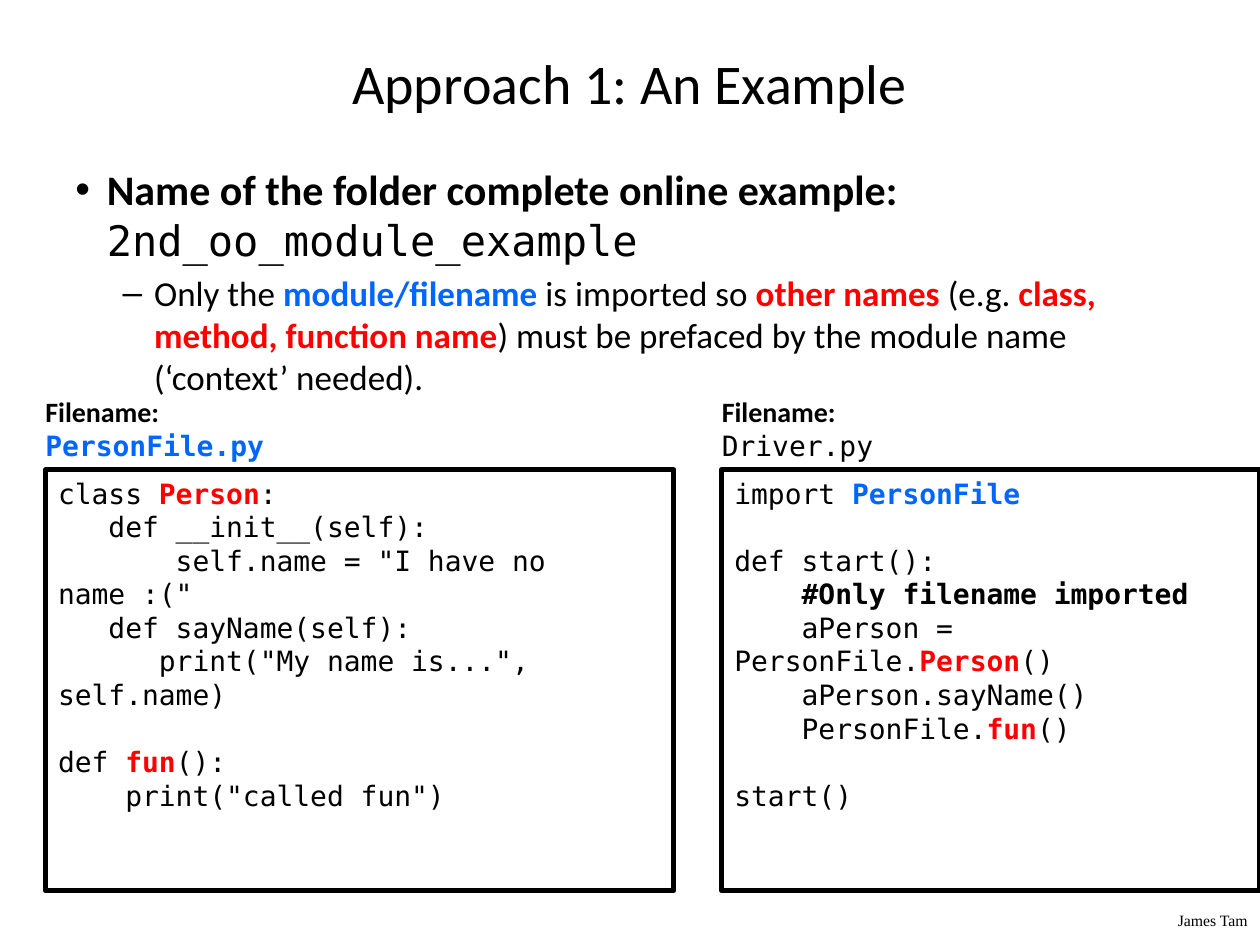
from dataclasses import dataclass

from lxml.etree import SubElement
from pptx import Presentation
from pptx.dml.color import RGBColor as RGB
from pptx.enum.shapes import MSO_SHAPE as SHAPE
from pptx.enum.text import MSO_ANCHOR as ANCHOR, PP_ALIGN as ALIGN
from pptx.oxml.ns import qn
from pptx.util import Pt


@dataclass(frozen=True)
class Theme:
    black: RGB = RGB(0, 0, 0)
    white: RGB = RGB(255, 255, 255)
    blue: RGB = RGB(0x00, 0x66, 0xFF)
    red: RGB = RGB(255, 0, 0)
    sans: str = "Calibri"
    mono: str = "DejaVu Sans Mono"
    serif: str = "Times New Roman"
    title: float = 32
    point: float = 24
    detail: float = 20
    code: float = 16
    footer: float = 9


T = Theme()
BOLD = {"bold": True}
BLUE = {"color": T.blue, "bold": True}
RED = {"color": T.red, "bold": True}
MONO = {"font": T.mono}

# A line is a list of runs; a run is plain text or (text, format).
TITLE = "Approach 1: An Example"
FOOTER = "James Tam"
POINT = [("Name of the folder complete online example: ", BOLD), ("2nd_oo_module_example", MONO)]
DETAIL = [
    "Only the ", ("module/filename ", BLUE), "is imported so ", ("other names ", RED),
    "(e.g. ", ("class, method, function name", RED),
    ") must be prefaced by the module name (‘context’ needed).",
]
# Each file: left, width, name run, then blocks of code lines set apart by a gap
FILES = [
    (26, 359, ("PersonFile.py", MONO | BLUE), [
        [
            ["class ", ("Person", RED), ":"],
            ["   def __init__(self):"],
            ['       self.name = "I have no name :("'],
            ["   def sayName(self):"],
            ['      print("My name is...", self.name)'],
        ],
        [
            ["def ", ("fun", RED), "():"],
            ['    print("called fun")'],
        ],
    ]),
    (412.5, 307.5, ("Driver.py", MONO), [
        [["import ", ("PersonFile", BLUE)]],
        [
            ["def start():"],
            [("    #Only filename imported", BOLD)],
            ["    aPerson = PersonFile.", ("Person", RED), "()"],
            ["    aPerson.sayName()"],
            ["    PersonFile.", ("fun", RED), "()"],
        ],
        [["start()"]],
    ]),
]
CODE_TOP, CODE_HEIGHT = 268.5, 240.5
LABEL_WIDTH, LABEL_HEIGHT = 152, 46.5
CODE_GAP = 1.2 * T.code
SIDE_INSET = 7.2


def add_line(tf, runs, size, font=T.sans, align=ALIGN.LEFT, before=0, indent=0, bullet=None, hang=18):
    """Add one paragraph of runs, using the empty first paragraph if there is one."""
    p = tf.paragraphs[0] if not tf.paragraphs[0].runs else tf.add_paragraph()
    p.alignment, p.space_before = align, Pt(before)
    pPr = p._p.get_or_add_pPr()
    pPr.set("marL", str(Pt(indent)))
    pPr.set("indent", str(Pt(-hang if bullet else 0)))
    if bullet:
        SubElement(pPr, qn("a:buFont")).set("typeface", "Arial")
        SubElement(pPr, qn("a:buChar")).set("char", bullet)
    for run in runs:
        text, style = (run, {}) if isinstance(run, str) else run
        r = p.add_run()
        r.text = text
        r.font.size = Pt(size)
        r.font.name = style.get("font", font)
        r.font.bold = style.get("bold", False)
        r.font.color.rgb = style.get("color", T.black)


def set_frame(sp, left_inset=SIDE_INSET, anchor=ANCHOR.TOP):
    tf = sp.text_frame
    tf.word_wrap = True
    tf.vertical_anchor = anchor
    tf.margin_left, tf.margin_right = Pt(left_inset), Pt(SIDE_INSET)
    tf.margin_top = tf.margin_bottom = Pt(3.6)
    return tf


def add_text(slide, box, **frame):
    return set_frame(slide.shapes.add_textbox(*map(Pt, box)), **frame)


def add_file(slide, left, width, name, blocks):
    """Draw a framed code listing with its file name above."""
    sp = slide.shapes.add_shape(
        SHAPE.RECTANGLE, *map(Pt, (left, CODE_TOP, width, CODE_HEIGHT)))
    sp.shadow.inherit = False
    sp.fill.solid()
    sp.fill.fore_color.rgb = T.white
    sp.line.color.rgb = T.black
    sp.line.width = Pt(3)
    tf = set_frame(sp, left_inset=0)
    for b, block in enumerate(blocks):
        for i, line in enumerate(block):
            gap = CODE_GAP if b and i == 0 else 0
            add_line(tf, line, T.code, font=T.mono, before=gap, indent=SIDE_INSET)

    label = (left, CODE_TOP - LABEL_HEIGHT, LABEL_WIDTH, LABEL_HEIGHT)
    add_line(add_text(slide, label, left_inset=0), [("Filename: ", BOLD), name], T.code)


def main():
    prs = Presentation()
    prs.slide_width, prs.slide_height = Pt(720), Pt(540)
    slide = prs.slides.add_slide(prs.slide_layouts[6])

    add_line(add_text(slide, (624, 517, 96, 18)), [FOOTER], T.footer,
             font=T.serif, align=ALIGN.RIGHT)
    add_line(add_text(slide, (36, 21.5, 648, 50.5), anchor=ANCHOR.MIDDLE), [TITLE], T.title,
             align=ALIGN.CENTER)
    body = add_text(slide, (36, 90, 648, 426))
    add_line(body, POINT, T.point, before=0.2 * T.point, indent=18, bullet="•")
    add_line(body, DETAIL, T.detail, before=0.2 * T.detail, indent=45, bullet="–")
    for file in FILES:
        add_file(slide, *file)
    prs.save("out.pptx")


if __name__ == "__main__":
    main()
